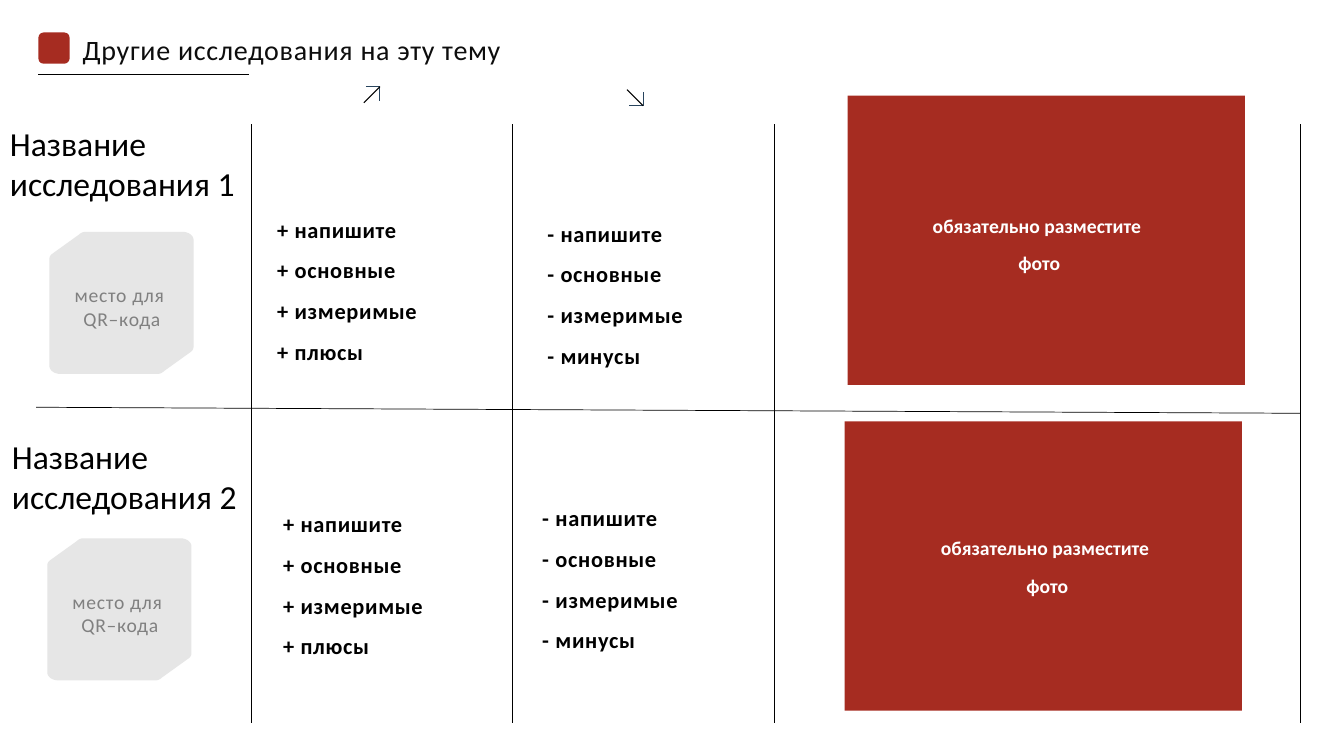
from dataclasses import dataclass
from typing import NamedTuple

from lxml import etree
from pptx import Presentation
from pptx import util as u
from pptx.dml.color import RGBColor
from pptx.enum import shapes, text
from pptx.oxml import ns


@dataclass(frozen=True)
class Theme:
    font: str = "Calibri"
    red: str = "A62C21"
    black: str = "000000"
    heading: str = "0D0D0D"
    white: str = "FFFFFF"
    tile: str = "E6E6E6"
    tile_text: str = "808080"
    arrow_head: str = "28445D"
    heading_size: float = 20
    name_size: float = 24
    list_size: float = 16
    label_size: float = 14
    rule_width: float = 0.5
    arrow_width: float = 0.75
    tracking: float = 0.5
    paragraph_gap: float = 10


class Point(NamedTuple):
    x: float
    y: float


class Size(NamedTuple):
    width: float
    height: float


@dataclass(frozen=True)
class TextStyle:
    size: float
    color: str
    bold: bool = False
    tracking: float = 0
    gap: float = 0
    align: text.PP_ALIGN = text.PP_ALIGN.LEFT
    anchor: text.MSO_ANCHOR = text.MSO_ANCHOR.TOP


@dataclass(frozen=True)
class Study:
    name: str
    name_at: Point
    tile_at: Point
    pluses_at: Point
    minuses_at: Point
    photo_at: Point
    caption_at: Point


@dataclass(frozen=True)
class Arrow:
    tip: Point
    tail_side: int  # 1 when the tail lies below the tip, -1 when above


THEME = Theme()
CENTER, MIDDLE = text.PP_ALIGN.CENTER, text.MSO_ANCHOR.MIDDLE
HEADING = TextStyle(THEME.heading_size, THEME.heading, tracking=THEME.tracking, anchor=MIDDLE)
NAME = TextStyle(THEME.name_size, THEME.black, anchor=MIDDLE)
POINTS = TextStyle(THEME.list_size, THEME.black, True, THEME.tracking, THEME.paragraph_gap)
CAPTION = TextStyle(THEME.label_size, THEME.white, True, gap=THEME.paragraph_gap, align=CENTER)
TILE_LABEL = TextStyle(THEME.label_size, THEME.tile_text, tracking=THEME.tracking, align=CENTER)

NAME_SIZE = Size(179.3, 145.4)
LIST_SIZE = Size(128.9, 113.8)
PHOTO_SIZE = Size(283.7, 206.6)
CAPTION_SIZE = Size(282.2, 67.7)
TILE_SIZE = Size(103, 101.5)
TILE_LABEL_SIZE = Size(118.1, 41)
TILE_LABEL_SHIFT = Point(-7.2, 33.1)

PLUSES = ["+ напишите", "+ основные", "+ измеримые", "+ плюсы"]
MINUSES = ["- напишите", "- основные", "- измеримые", "- минусы"]
PHOTO_CAPTION = ["обязательно разместите ", "фото"]
TILE_TEXT = ["место для ", "QR–кода"]

STUDIES = [
    Study("Название исследования 1", Point(0, 43.9), Point(35.3, 165.6), Point(190.8, 150.5),
          Point(383.8, 153.4), Point(605.5, 68.4), Point(601.2, 149)),
    Study("Название исследования 2", Point(1.4, 267.1), Point(33.8, 384.5), Point(195.1, 360.7),
          Point(380.2, 356.4), Point(603.4, 301), Point(607, 379.4)),
]
ARROWS = [Arrow(Point(271.4, 61.9), 1), Arrow(Point(459.4, 75.6), -1)]
ARROW_ARM, ARROW_SHAFT = 10, 11.5
COLUMN_EDGES = [179.3, 365.8, 553, 928.8]
COLUMN_TOP, COLUMN_BOTTOM = 88.6, 516.2


def rgb(color: str) -> RGBColor:
    return RGBColor.from_string(color)


def paint(shape, fill: str | None) -> None:
    shape.shadow.inherit = False
    shape.line.fill.background()
    if fill:
        shape.fill.solid()
        shape.fill.fore_color.rgb = rgb(fill)
    else:
        shape.fill.background()


def add_block(slide, kind, at: Point, size: Size, fill: str | None = None):
    block = slide.shapes.add_shape(kind, *map(u.Pt, (*at, *size)))
    paint(block, fill)
    return block


def write(shape, lines: list[str], style: TextStyle) -> None:
    frame = shape.text_frame
    frame.word_wrap = True
    frame.vertical_anchor = style.anchor
    frame.text = "\n".join(lines)
    for paragraph in frame.paragraphs:
        paragraph.alignment = style.align
        paragraph.space_before = u.Pt(style.gap)
        font = paragraph.font
        font.name, font.size, font.bold = THEME.font, u.Pt(style.size), style.bold
        font.color.rgb = rgb(style.color)
        if style.tracking:
            for run in paragraph.runs:
                run._r.get_or_add_rPr().set("spc", str(round(style.tracking * 100)))


def add_text(slide, at: Point, size: Size, lines: list[str], style: TextStyle) -> None:
    write(slide.shapes.add_textbox(*map(u.Pt, (*at, *size))), lines, style)


def add_rule(slide, start: Point, end: Point, width: float = THEME.rule_width) -> None:
    rule = slide.shapes.add_connector(shapes.MSO_CONNECTOR.STRAIGHT, *map(u.Pt, (*start, *end)))
    rule.line.color.rgb = rgb(THEME.black)
    rule.line.width = u.Pt(width)
    etree.SubElement(rule._element.spPr, ns.qn("a:effectLst"))


def add_outline(slide, points: list[Point], close: bool):
    first, *rest = [(u.Pt(p.x), u.Pt(p.y)) for p in points]
    builder = slide.shapes.build_freeform(*first)
    builder.add_line_segments(rest, close=close)
    return builder.convert_to_shape()


def curve(a: Point, b: Point, c: Point, d: Point, steps: int = 8) -> list[Point]:
    """Sample the cubic Bezier curve from a to d, both ends included."""
    def blend(t: float, values: tuple[float, ...]) -> float:
        weights = ((1 - t) ** 3, 3 * t * (1 - t) ** 2, 3 * t * t * (1 - t), t ** 3)
        return sum(w * v for w, v in zip(weights, values))

    return [Point(blend(i / steps, (a.x, b.x, c.x, d.x)), blend(i / steps, (a.y, b.y, c.y, d.y)))
            for i in range(steps + 1)]


def add_tile(slide, at: Point) -> None:
    """Draw the tile with two cut corners; its second half is the first turned by 180 degrees."""
    w, h = TILE_SIZE
    half = [
        *curve(Point(w, 82), Point(w, 83.5), Point(102.2, 85), Point(100.8, 85.9)),
        *curve(Point(82, 99.4), Point(80.6, 100.7), Point(79.2, h), Point(77, h)),
        *curve(Point(7.9, h), Point(3.6, h), Point(0, 98.9), Point(0, 95.7)),
    ]
    outline = half + [Point(w - p.x, h - p.y) for p in half]
    tile = add_outline(slide, [Point(at.x + p.x, at.y + p.y) for p in outline], close=True)
    paint(tile, THEME.tile)
    label_at = Point(at.x + TILE_LABEL_SHIFT.x, at.y + TILE_LABEL_SHIFT.y)
    add_text(slide, label_at, TILE_LABEL_SIZE, TILE_TEXT, TILE_LABEL)


def add_arrow(slide, arrow: Arrow) -> None:
    tip, side = arrow.tip, arrow.tail_side
    arms = [Point(tip.x - ARROW_ARM, tip.y), tip, Point(tip.x, tip.y + side * ARROW_ARM)]
    head = add_outline(slide, arms, close=False)
    paint(head, None)
    head.line.color.rgb = rgb(THEME.arrow_head)
    head.line.width = u.Pt(THEME.arrow_width)
    tail = Point(tip.x - ARROW_SHAFT, tip.y + side * ARROW_SHAFT)
    add_rule(slide, tail, tip, THEME.arrow_width)


def add_study(slide, study: Study) -> None:
    add_text(slide, study.name_at, NAME_SIZE, [study.name], NAME)
    add_tile(slide, study.tile_at)
    add_text(slide, study.pluses_at, LIST_SIZE, PLUSES, POINTS)
    add_text(slide, study.minuses_at, LIST_SIZE, MINUSES, POINTS)
    add_block(slide, shapes.MSO_SHAPE.RECTANGLE, study.photo_at, PHOTO_SIZE, THEME.red)
    add_text(slide, study.caption_at, CAPTION_SIZE, PHOTO_CAPTION, CAPTION)


def add_heading(slide) -> None:
    rounded = shapes.MSO_SHAPE.ROUNDED_RECTANGLE
    add_block(slide, rounded, Point(27.4, 23.2), Size(22.3, 22.3), THEME.red)
    heading = add_block(slide, rounded, Point(49, 24.5), Size(657.4, 20.9))
    heading.adjustments[0] = 0.5
    write(heading, ["Другие исследования на эту тему"], HEADING)
    add_rule(slide, Point(27.4, 53.3), Point(177.8, 53.3))


def main() -> None:
    deck = Presentation()
    deck.slide_width, deck.slide_height = u.Pt(960), u.Pt(540)
    slide = deck.slides.add_slide(deck.slide_layouts[6])
    add_heading(slide)
    for arrow in ARROWS:
        add_arrow(slide, arrow)
    for x in COLUMN_EDGES:
        add_rule(slide, Point(x, COLUMN_TOP), Point(x, COLUMN_BOTTOM))
    add_rule(slide, Point(25.9, 290.9), Point(928.8, 295.2))
    for study in STUDIES:
        add_study(slide, study)
    deck.save("out.pptx")


if __name__ == "__main__":
    main()
